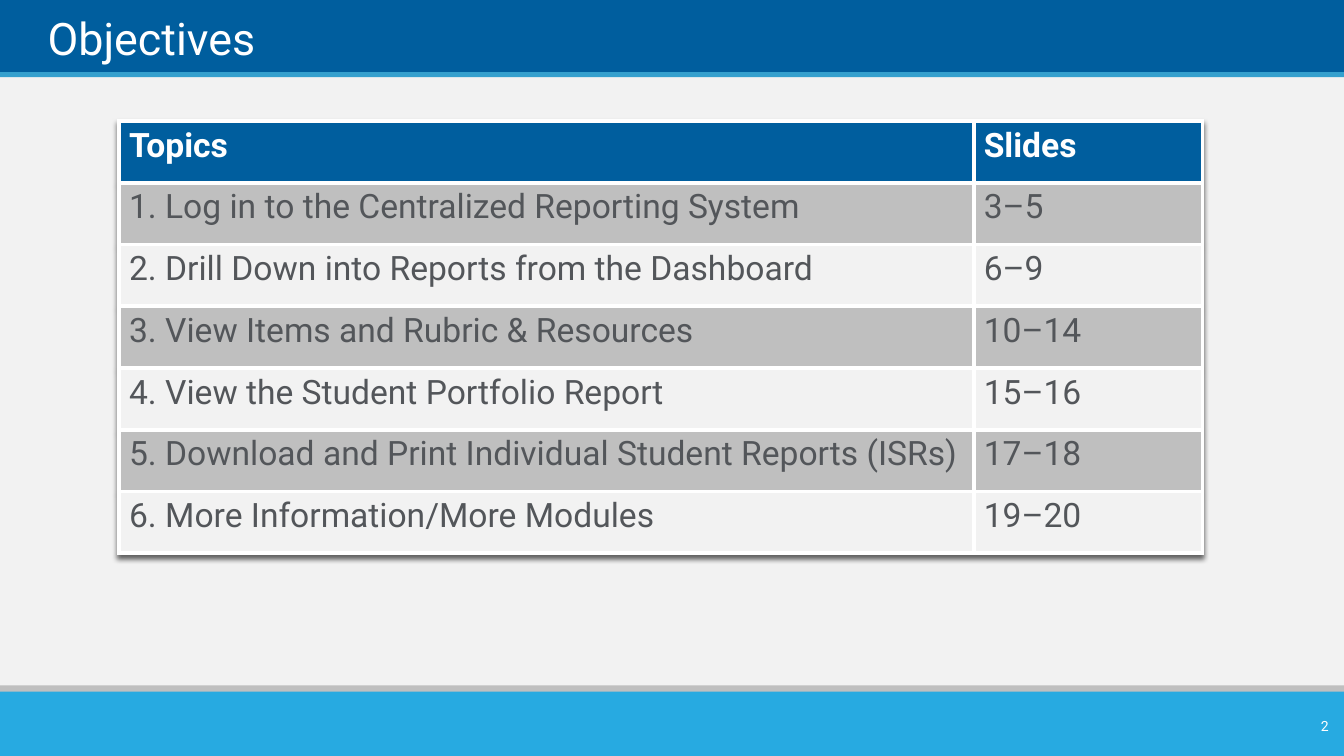
from lxml import etree
from pptx import Presentation
from pptx.dml.color import RGBColor
from pptx.enum.shapes import MSO_SHAPE
from pptx.enum.text import MSO_ANCHOR, PP_ALIGN
from pptx.oxml import parse_xml
from pptx.oxml.ns import nsdecls
from pptx.util import Pt

RECTANGLE = MSO_SHAPE.RECTANGLE
BOTTOM, MIDDLE = MSO_ANCHOR.BOTTOM, MSO_ANCHOR.MIDDLE
LEFT, RIGHT = PP_ALIGN.LEFT, PP_ALIGN.RIGHT

COLORS = {
    "background": "F2F2F2",
    "navy": "005E9E",
    "accent": "35A0CE",
    "gray": "BFBFBF",
    "sky": "27AAE1",
    "white": "FFFFFF",
    "body": "53565A",
}

TOPICS = [
    ("Topics", "Slides"),
    ("1. Log in to the Centralized Reporting System", "3–5"),
    ("2. Drill Down into Reports from the Dashboard", "6–9"),
    ("3. View Items and Rubric & Resources", "10–14"),
    ("4. View the Student Portfolio Report", "15–16"),
    ("5. Download and Print Individual Student Reports (ISRs)", "17–18"),
    ("6. More Information/More Modules", "19–20"),
]


class SlideBuilder:
    font_name = "Roboto"
    border_width = Pt(3)

    def __init__(self, slide):
        self.slide = slide

    def color(self, name):
        return RGBColor.from_string(COLORS[name])

    def paint(self, fill, name):
        fill.solid()
        fill.fore_color.rgb = self.color(name)

    def add_text(self, paragraph, text, size, color, bold=False):
        run = paragraph.add_run()
        run.text = text
        formats = {"name": self.font_name, "size": Pt(size), "bold": bold}
        for attribute, value in formats.items():
            setattr(run.font, attribute, value)
        run.font.color.rgb = self.color(color)

    def band(self, top, height, color):
        band = self.slide.shapes.add_shape(RECTANGLE, 0, Pt(top), Pt(960), Pt(height))
        band.shadow.inherit = False
        self.paint(band.fill, color)
        band.line.fill.background()

    def label(self, text, box, size, anchor, align, inset):
        frame = self.slide.shapes.add_textbox(*map(Pt, box)).text_frame
        formats = {"word_wrap": True, "vertical_anchor": anchor}
        formats.update({f"margin_{side}": Pt(inset) for side in ("left", "top", "right", "bottom")})
        for attribute, value in formats.items():
            setattr(frame, attribute, value)
        frame.paragraphs[0].alignment = align
        self.add_text(frame.paragraphs[0], text, size, "white")

    def border(self, cell):
        properties = cell._tc.get_or_add_tcPr()
        for index, side in enumerate("LRTB"):
            properties.insert(index, parse_xml(
                f'<a:ln{side} {nsdecls("a")} w="{self.border_width}"><a:solidFill>'
                f'<a:srgbClr val="{COLORS["white"]}"/></a:solidFill></a:ln{side}>'))

    def table_shadow(self, table):
        effects = parse_xml(f'<a:effectLst {nsdecls("a")}/>')
        shadow = etree.SubElement(effects, effects.tag.replace("effectLst", "outerShdw"),
                                  blurRad=str(Pt(4)), dist=str(Pt(3)), dir="5400000",
                                  algn="t", rotWithShape="0")
        shadow.append(parse_xml(
            f'<a:srgbClr {nsdecls("a")} val="000000"><a:alpha val="60000"/></a:srgbClr>'))
        table._tbl.tblPr.insert(0, effects)

    def table(self, rows, left, top, widths, row_height):
        table = self.slide.shapes.add_table(
            len(rows), len(widths), Pt(left), Pt(top),
            Pt(sum(widths)), Pt(row_height * len(rows))).table
        for column, width in zip(table.columns, widths):
            column.width = Pt(width)
        for row_index, texts in enumerate(rows):
            table.rows[row_index].height = Pt(row_height)
            header = row_index == 0
            stripe = "gray" if row_index % 2 else "background"
            for column_index, text in enumerate(texts):
                cell = table.cell(row_index, column_index)
                self.paint(cell.fill, "navy" if header else stripe)
                self.border(cell)
                self.add_text(cell.text_frame.paragraphs[0], text, 24,
                              "white" if header else "body", header)
        self.table_shadow(table)


def main():
    presentation = Presentation()
    presentation.slide_width, presentation.slide_height = Pt(960), Pt(540)
    slide = presentation.slides.add_slide(presentation.slide_layouts[6])
    builder = SlideBuilder(slide)
    builder.paint(slide.background.fill, "background")
    builder.band(-0.72, 54, "navy")
    builder.band(51.6, 3.6, "accent")
    builder.band(489.6, 10, "gray")
    builder.band(494, 46, "sky")
    builder.label("Objectives", (34, 5, 895, 41), 32, BOTTOM, LEFT, 0)
    builder.table(TOPICS, 85, 86.4, (610.5, 163.5), 44.13)
    builder.label("2", (900.7, 507.6, 55.5, 21.6), 10, MIDDLE, RIGHT, 7.2)
    presentation.save("out.pptx")


if __name__ == "__main__":
    main()
